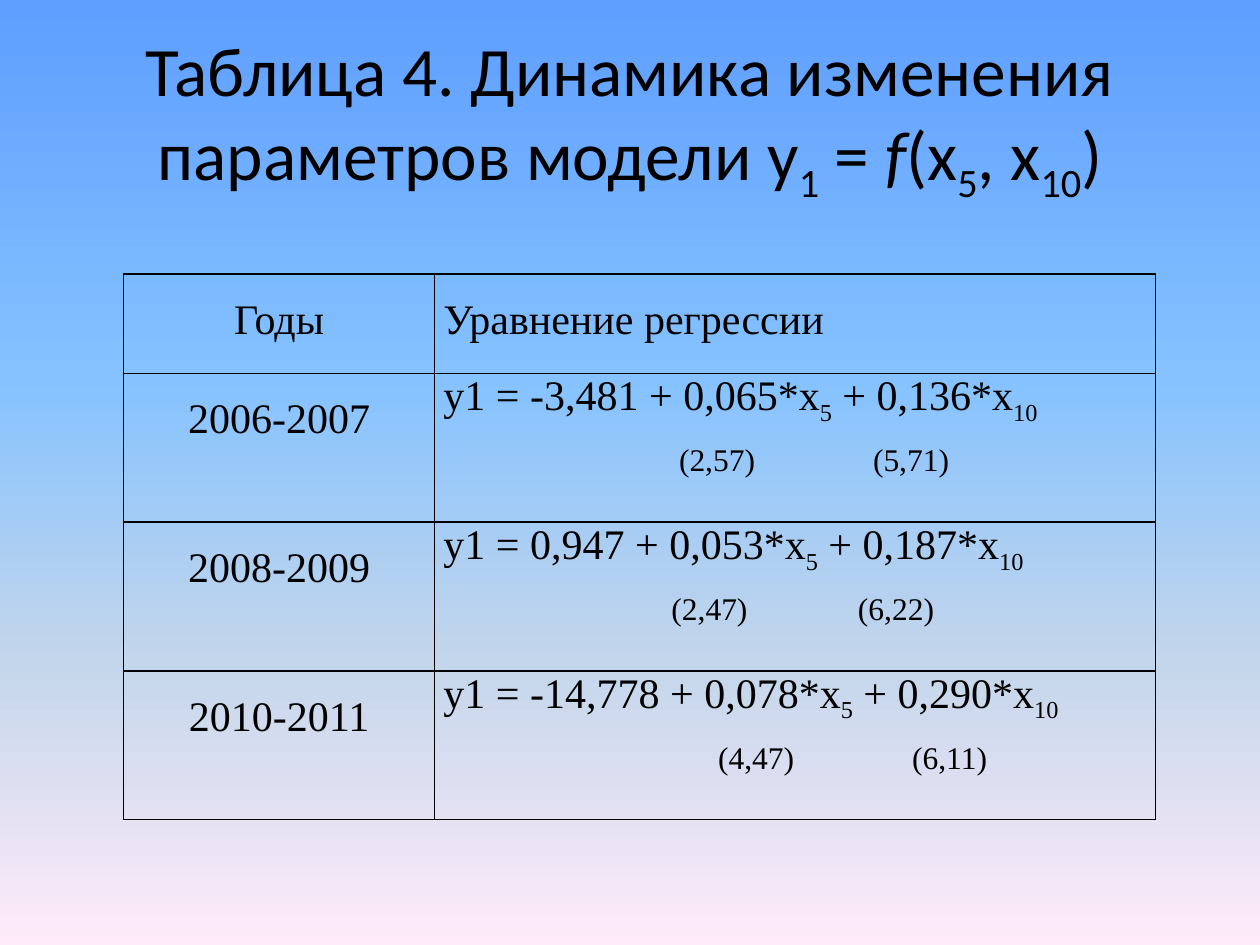
from copy import deepcopy

from lxml import etree
from pptx import Presentation
from pptx.dml.color import RGBColor
from pptx.enum.text import MSO_ANCHOR, MSO_AUTO_SIZE, PP_ALIGN
from pptx.oxml.ns import qn
from pptx.util import Inches, Pt

CENTER, JUSTIFY = PP_ALIGN.CENTER, PP_ALIGN.JUSTIFY
MIDDLE, TOP = MSO_ANCHOR.MIDDLE, MSO_ANCHOR.TOP
NO_FIT = MSO_AUTO_SIZE.NONE

COLORS = {"text": "000000", "border": "000000", "sky": "5E9EFF",
          "light_blue": "85C2FF", "haze": "C4D6EB", "pink": "FFEBFA"}
BACKGROUND = [(0, "sky"), (0.4, "light_blue"), (0.7, "haze"), (1, "pink")]
TITLE_FONT = {"name": "Calibri", "size": Pt(39.6)}
CELL_FONT = {"name": "Times New Roman", "size": Pt(24)}
STAT_FONT = {"name": "Times New Roman", "size": Pt(18)}

TITLE = ["Таблица 4. Динамика изменения параметров модели у", ("1", "sub"), " = ",
         ("f", "italic"), "(x", ("5", "sub"), ", x", ("10", "sub"), ")"]
HEADERS = ["Годы", "Уравнение регрессии"]
# years, constant, factors of x5 and x10, t-statistics with their tab stops in inches
MODELS = [
    ("2006-2007", "-3,481", "0,065", "0,136", [("(2,57)", 1.87), ("(5,71)", 3.41)]),
    ("2008-2009", "0,947", "0,053", "0,187", [("(2,47)", 1.81), ("(6,22)", 3.29)]),
    ("2010-2011", "-14,778", "0,078", "0,290", [("(4,47)", 2.18), ("(6,11)", 3.72)]),
]


def rgb(name):
    return RGBColor.from_string(COLORS[name])


class SlideBuilder:
    """Holds the style and the current slide; places are shares of its size."""

    def __init__(self, prs):
        self.width, self.height = prs.slide_width, prs.slide_height
        self.slide = prs.slides.add_slide(prs.slide_layouts[5])

    def box(self, x, y, w, h):
        return (round(x * self.width), round(y * self.height),
                round(w * self.width), round(h * self.height))

    def background(self, stops):
        fill = self.slide.background.fill
        fill.gradient()
        fill.gradient_angle = 270
        gs_list = self.slide.element.find(".//" + qn("a:gsLst"))
        for _ in range(len(stops) - len(gs_list)):
            gs_list.append(deepcopy(gs_list[0]))
        for stop, (position, color) in zip(fill.gradient_stops, stops):
            stop.position = position
            stop.color.rgb = rgb(color)

    def paragraph(self, p, parts, font, align, spacing=1.0):
        """Write parts: plain strings or (text, "sub" or "italic") pairs."""
        p.alignment, p.line_spacing = align, spacing
        for part in parts:
            text, style = (part, None) if isinstance(part, str) else part
            r = p.add_run()
            r.text = text
            for key, value in font.items():
                setattr(r.font, key, value)
            r.font.color.rgb = rgb("text")
            if style == "italic":
                r.font.italic = True
            elif style == "sub":
                r.font._element.set("baseline", "-25000")

    def tab_stops(self, p, positions):
        tabs = etree.SubElement(p._p.get_or_add_pPr(), qn("a:tabLst"))
        for position in positions:
            etree.SubElement(tabs, qn("a:tab"), pos=str(Inches(position)), algn="l")

    def title(self, parts, box):
        sp = self.slide.shapes.title
        sp.left, sp.top, sp.width, sp.height = self.box(*box)
        tf = sp.text_frame
        tf.auto_size, tf.vertical_anchor = NO_FIT, MIDDLE
        self.paragraph(tf.paragraphs[0], parts, TITLE_FONT, CENTER)

    def table(self, box, columns, rows):
        """Add an empty ruled table; columns and rows are shares of the slide."""
        table = self.slide.shapes.add_table(len(rows), len(columns), *self.box(*box)).table
        table.first_row = table.horz_banding = False
        for column, share in zip(table.columns, columns):
            column.width = round(share * self.width)
        for row, share in zip(table.rows, rows):
            row.height = round(share * self.height)
        for cell in table.iter_cells():
            self.cell_style(cell)
        return table

    def cell_style(self, cell):
        cell.margin_left = cell.margin_right = Inches(0.07)
        cell.margin_top = cell.margin_bottom = 0
        cell.vertical_anchor = TOP
        tc_pr = cell._tc.get_or_add_tcPr()
        for side in ("lnL", "lnR", "lnT", "lnB"):
            ln = etree.SubElement(tc_pr, qn("a:" + side), w=str(Pt(1)))
            fill = etree.SubElement(ln, qn("a:solidFill"))
            etree.SubElement(fill, qn("a:srgbClr"), val=COLORS["border"])
        cell.fill.background()

    def cell_text(self, cell, text, align):
        self.paragraph(cell.text_frame.paragraphs[0], [text], CELL_FONT, align, 1.5)

    def equation(self, cell, constant, x5, x10, stats):
        """Write a regression equation with its t-statistics underneath."""
        tf = cell.text_frame
        parts = [f"y1 = {constant} + {x5}*x", ("5", "sub"), f" + {x10}*x", ("10", "sub")]
        self.paragraph(tf.paragraphs[0], parts, CELL_FONT, JUSTIFY)
        p = tf.add_paragraph()
        self.paragraph(p, ["\t" + value for value, _ in stats], STAT_FONT, JUSTIFY, 1.5)
        self.tab_stops(p, [position for _, position in stats])


def main():
    prs = Presentation()
    prs.slide_width, prs.slide_height = Inches(10), Inches(7.5)
    s = SlideBuilder(prs)
    s.background(BACKGROUND)
    s.title(TITLE, (0.05, 0.04, 0.9, 1 / 6))
    table = s.table((0.098, 0.29, 0.819, 0.577), [0.247, 0.572],
                    [0.105] + [0.1575] * len(MODELS))
    for column, (header, align) in enumerate(zip(HEADERS, (CENTER, JUSTIFY))):
        s.cell_text(table.cell(0, column), header, align)
    for row, (years, *model) in enumerate(MODELS, start=1):
        s.cell_text(table.cell(row, 0), years, CENTER)
        s.equation(table.cell(row, 1), *model)
    prs.save("out.pptx")


if __name__ == "__main__":
    main()
